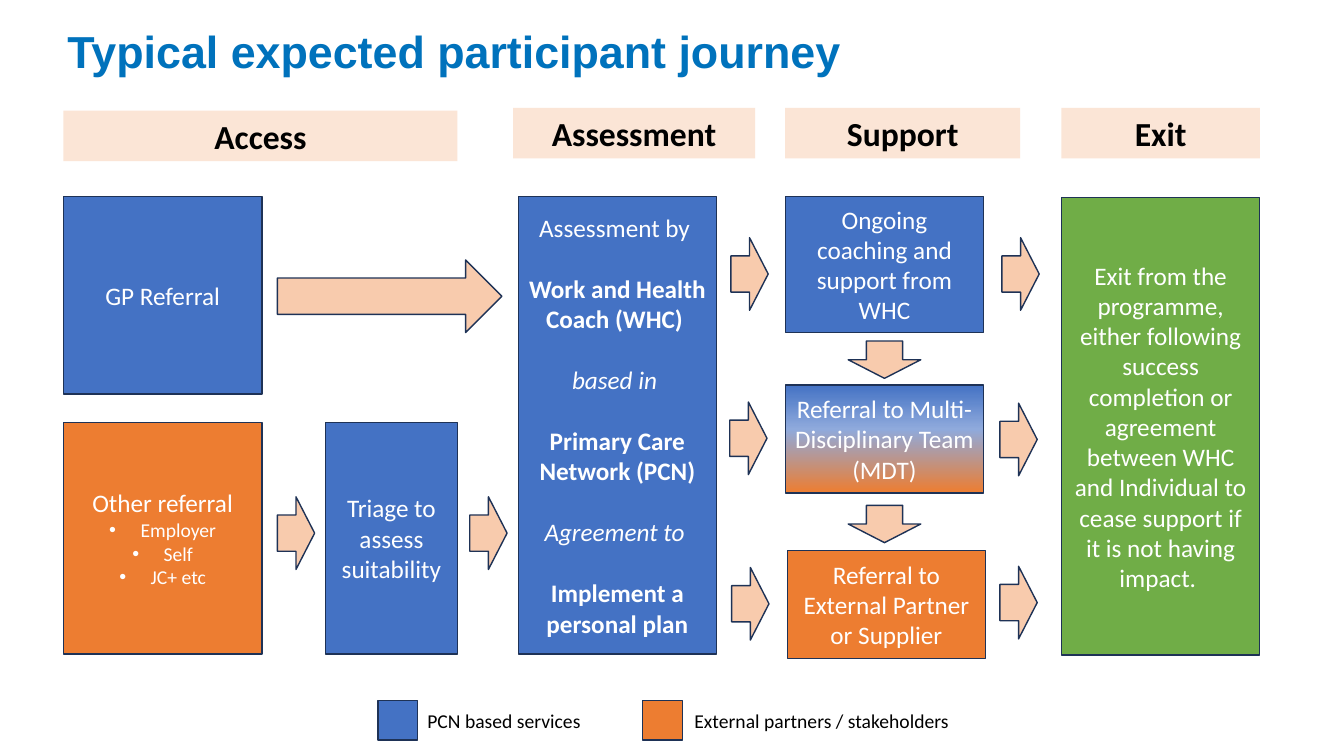
from copy import deepcopy

from lxml import etree
from pptx import Presentation
from pptx.dml.color import RGBColor
from pptx.enum.shapes import MSO_SHAPE as Shape
from pptx.enum.text import MSO_ANCHOR as Anchor, PP_ALIGN as Align
from pptx.oxml.ns import qn
from pptx.util import Cm, Pt

TITLE_BLUE = RGBColor(0x00, 0x72, 0xBC)
BLUE = RGBColor(0x44, 0x72, 0xC4)
LIGHT_BLUE = RGBColor(0x8F, 0xAA, 0xDC)
ORANGE = RGBColor(0xED, 0x7D, 0x31)
GREEN = RGBColor(0x70, 0xAD, 0x47)
PEACH = RGBColor(0xF8, 0xCB, 0xAD)
PALE_PEACH = RGBColor(0xFB, 0xE5, 0xD6)
NAVY = RGBColor(0x1E, 0x32, 0x56)
WHITE = RGBColor(0xFF, 0xFF, 0xFF)
BLACK = RGBColor(0x00, 0x00, 0x00)

deck = Presentation()
deck.slide_width, deck.slide_height = Cm(33.87), Cm(19.05)
page = deck.slides.add_slide(deck.slide_layouts[6])


def add_block(kind, left, top, width, height, color, outlined=True):
    block = page.shapes.add_shape(kind, Cm(left), Cm(top), Cm(width), Cm(height))
    block.shadow.inherit = False
    block.fill.solid()
    block.fill.fore_color.rgb = color
    if outlined:
        block.line.color.rgb = NAVY
        block.line.width = Pt(1)
    else:
        block.line.fill.background()
    return block


def write(box, lines, size, color, font="Calibri", align=Align.CENTER):
    frame = box.text_frame
    frame.word_wrap = True
    frame.vertical_anchor = Anchor.MIDDLE
    frame.text = "\n".join(lines)
    for para in frame.paragraphs:
        para.alignment = align
        para.font.name = font
        para.font.size = Pt(size)
        para.font.color.rgb = color
    return frame.paragraphs


# Title
title = page.shapes.add_textbox(Cm(1.45), Cm(0.18), Cm(32.42), Cm(2.36))
heading = write(title, ["Typical expected participant journey"], 32,
                TITLE_BLUE, "Arial", Align.LEFT)[0]
heading.font.bold = True
heading.line_spacing = 0.9

# Stage headers
for name, left, top, width in [
    ("Access", 1.6, 2.79, 9.93),
    ("Assessment", 12.93, 2.72, 6.1),
    ("Support", 19.79, 2.72, 5.92),
    ("Exit", 26.75, 2.72, 5),
]:
    header = add_block(Shape.RECTANGLE, left, top, width, 1.27, PALE_PEACH, False)
    write(header, [name], 24, BLACK)[0].font.bold = True

# Journey steps
steps = {}
for name, left, top, width, height, color, lines in [
    ("gp", 1.6, 4.95, 5, 4.98, BLUE, ["GP Referral"]),
    ("other", 1.6, 10.64, 5, 5.84, ORANGE,
     ["Other referral", "Employer", "Self", "JC+ etc"]),
    ("triage", 8.2, 10.64, 3.33, 5.84, BLUE, ["Triage to assess suitability"]),
    ("assessment", 13.06, 4.95, 5, 11.53, BLUE,
     ["Assessment by ", "Work and Health Coach (WHC) ", "based in ",
      "Primary Care Network (PCN)", "Agreement to ", "Implement a personal plan"]),
    ("coaching", 19.79, 4.95, 5, 3.43, BLUE,
     ["Ongoing coaching and support from WHC"]),
    ("team", 19.79, 9.7, 5, 2.72, BLUE,
     ["Referral to Multi-Disciplinary Team (MDT)"]),
    ("partner", 19.84, 13.87, 5, 2.72, ORANGE,
     ["Referral to External Partner or Supplier"]),
    ("exit", 26.75, 4.98, 5, 11.53, GREEN,
     ["Exit from the programme, either following success completion or agreement "
      "between WHC and Individual to cease support if it is not having impact. "]),
]:
    steps[name] = add_block(Shape.RECTANGLE, left, top, width, height, color)
    write(steps[name], lines, 18, WHITE)

# Bulleted referral sources
for para in steps["other"].text_frame.paragraphs[1:]:
    props = para._p.get_or_add_pPr()
    props.set("marL", str(Cm(0.79)))
    props.set("indent", str(-Cm(0.79)))
    bullet = etree.Element(qn("a:buChar"), char="•")
    props.insert(0, bullet)
    bullet_font = etree.Element(qn("a:buFont"), typeface="Arial")
    props.insert(0, bullet_font)
    para.font.size = Pt(14)

# Assessment lines: bold actions between italic links
for index, para in enumerate(steps["assessment"].text_frame.paragraphs):
    if index:
        para.space_before = Pt(22)
    para.font.bold = index % 2 == 1
    para.font.italic = index in (2, 4)

# Blue-to-orange blend on the shared team step
blend = steps["team"].fill
blend.gradient()
blend.gradient_angle = 270
stop_list = steps["team"]._element.spPr.find(qn("a:gradFill")).find(qn("a:gsLst"))
stop_list.insert(1, deepcopy(stop_list[0]))
for stop, color, position in zip(blend.gradient_stops,
                                 (BLUE, LIGHT_BLUE, ORANGE), (0, 0.41, 1)):
    stop.color.rgb = color
    stop.position = position

# Arrows between steps
for left, top, width, turn in [
    (6.99, 6.55, 5.66, 0),
    (6.99, 12.52, 0.94, 0),
    (11.84, 12.52, 0.94, 0),
    (18.42, 5.99, 0.94, 0),
    (18.39, 10.13, 0.94, 0),
    (18.44, 14.3, 0.94, 0),
    (21.82, 8.15, 0.94, 90),
    (21.82, 12.29, 0.94, 90),
    (25.25, 5.99, 0.94, 0),
    (25.2, 10.16, 0.94, 0),
    (25.2, 14.27, 0.94, 0),
]:
    arrow = add_block(Shape.RIGHT_ARROW, left, top, width, 1.83, PEACH)
    arrow.rotation = turn

# Legend
for left, color, label_left, label_width, label in [
    (9.53, BLUE, 10.52, 4.42, "PCN based services"),
    (16.2, ORANGE, 17.25, 6.99, "External partners / stakeholders"),
]:
    add_block(Shape.RECTANGLE, left, 17.65, 1, 1, color)
    caption = page.shapes.add_textbox(Cm(label_left), Cm(17.74), Cm(label_width), Cm(0.86))
    write(caption, [label], 14, BLACK, align=Align.LEFT)
    caption.text_frame.word_wrap = False

deck.save("out.pptx")
